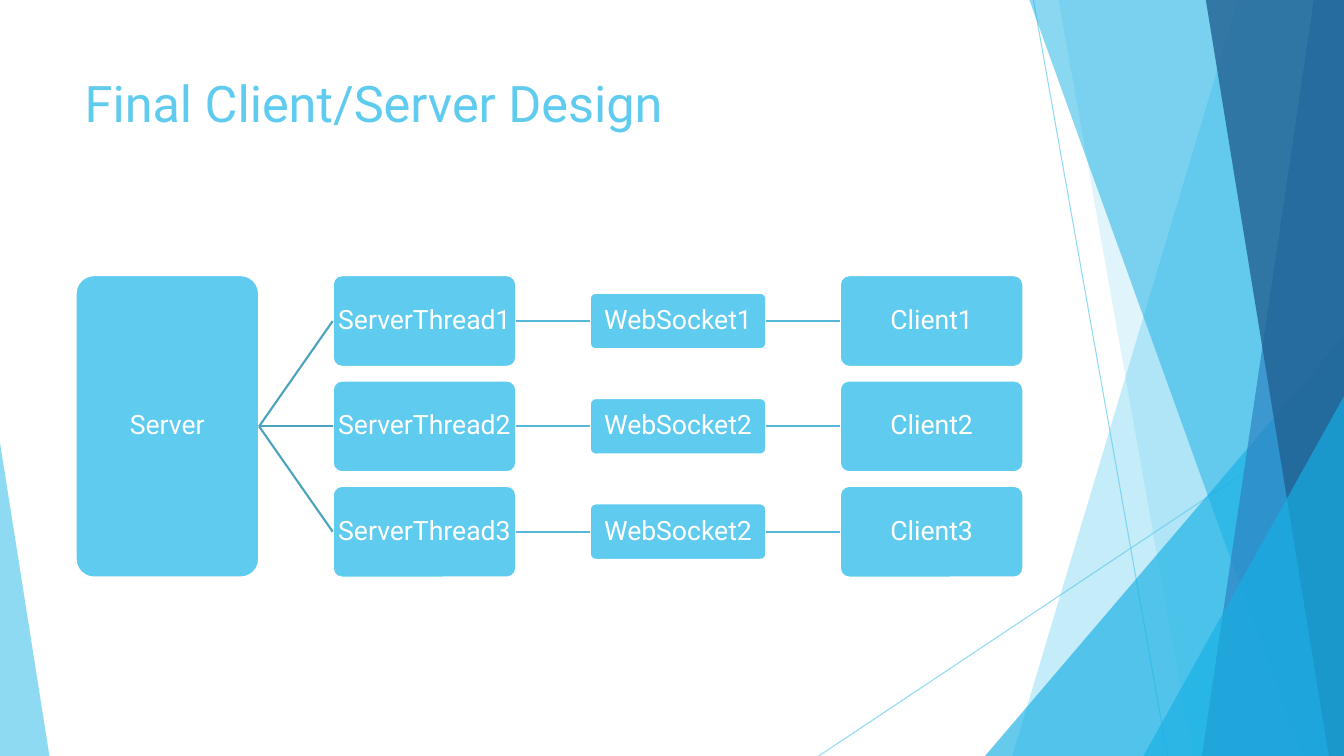
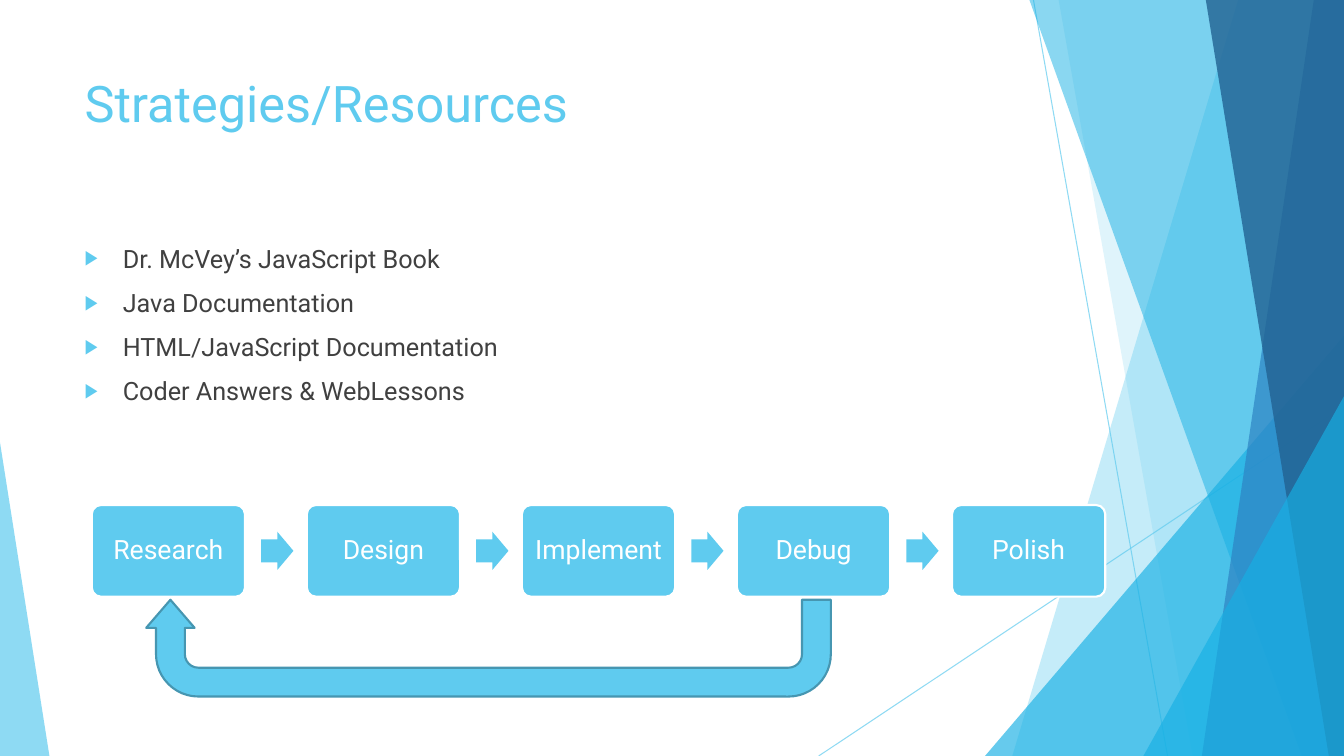
from lxml import etree
from pptx import Presentation
from pptx.dml.color import RGBColor
from pptx.enum import shapes, text
from pptx.oxml import ns
from pptx.util import Inches, Pt

FONT = "Roboto"
SKY = RGBColor(0x5F, 0xCB, 0xEF)
CYAN = RGBColor(0x17, 0xB0, 0xE4)
BLUE = RGBColor(0x2E, 0x83, 0xC3)
NAVY = RGBColor(0x22, 0x62, 0x92)
TRUNK_LINE = RGBColor(0x4C, 0xA3, 0xBF)
BRANCH_LINE = RGBColor(0x56, 0xB8, 0xD9)
LOOP_LINE = RGBColor(0x46, 0x96, 0xB1)
GRAY = RGBColor(0x40, 0x40, 0x40)
WHITE = RGBColor(0xFF, 0xFF, 0xFF)
PAGE_WIDTH, PAGE_HEIGHT = 13.33, 7.5
RIGHT_SITE, LEFT_SITE = 3, 1
SHAPE = shapes.MSO_SHAPE


def add_xml(parent, tag, **attributes):
    """Append a DrawingML element to a parent and return it."""
    return etree.SubElement(parent, ns.qn(tag), attributes)


def paint(fill, color, opacity=100):
    """Give a fill a solid colour with an opacity in percent."""
    fill.solid()
    fill.fore_color.rgb = color
    if opacity < 100:
        tint = fill._xPr.find(ns.qn("a:solidFill"))[0]
        add_xml(tint, "a:alpha", val=str(opacity * 1000))


def style_shape(shape, color, opacity=100, outline=None):
    """Set the fill and outline of a shape and drop its shadow."""
    shape.shadow.inherit = False
    paint(shape.fill, color, opacity)
    if outline is None:
        shape.line.fill.background()
    else:
        shape.line.color.rgb = outline
        shape.line.width = Pt(1.5)


def style_para(para, size, color):
    """Set the font of a whole paragraph."""
    para.font.name = FONT
    para.font.size = Pt(size)
    para.font.color.rgb = color


def add_preset(page, kind, box, color, opacity=100, outline=None, adjust=()):
    """Add a preset shape in a box given in inches."""
    shape = page.shapes.add_shape(kind, *map(Inches, box))
    for index, value in enumerate(adjust):
        shape.adjustments[index] = value
    style_shape(shape, color, opacity, outline)
    return shape


def add_line(page, start, end, color, width, opacity=100):
    """Add a straight connector without a shadow."""
    line = page.shapes.add_connector(
        shapes.MSO_CONNECTOR.STRAIGHT, *map(Inches, start + end))
    line.line.width = Pt(width)
    paint(line.line.fill, color, opacity)
    add_xml(line._element.spPr, "a:effectLst")
    return line


def add_node(page, box, label):
    """Add a rounded box with a centred label."""
    node = add_preset(page, SHAPE.ROUNDED_RECTANGLE, box, SKY,
                      outline=WHITE, adjust=[0.1])
    frame = node.text_frame
    frame.margin_left = frame.margin_right = Inches(0.01)
    frame.margin_top = frame.margin_bottom = Inches(0.01)
    frame.vertical_anchor = text.MSO_ANCHOR.MIDDLE
    para = frame.paragraphs[0]
    para.text = label
    para.alignment = text.PP_ALIGN.CENTER
    para.line_spacing = 0.9
    style_para(para, 19, WHITE)
    return node


def link_nodes(page, source, target, color):
    """Join the right side of one node to the left side of another."""
    link = add_line(page, (0, 0), (0, 0), color, 1.5)
    link.begin_connect(source, RIGHT_SITE)
    link.end_connect(target, LEFT_SITE)


def add_band(page, top_left, bottom_left, color, opacity):
    """Add a slanted band that reaches to the right edge of the page."""
    corners = [(top_left, 0), (PAGE_WIDTH, 0),
               (PAGE_WIDTH, PAGE_HEIGHT), (bottom_left, PAGE_HEIGHT)]
    points = [(Inches(x), Inches(y)) for x, y in corners]
    builder = page.shapes.build_freeform(*points[0], scale=1.0)
    builder.add_line_segments(points[1:], close=True)
    style_shape(builder.convert_to_shape(), color, opacity)


def add_corner(page, left, top, width, peak, color, opacity):
    """Add a right triangle that stands on the bottom of the page."""
    add_preset(page, SHAPE.ISOSCELES_TRIANGLE,
               (left, top, width, PAGE_HEIGHT - top), color, opacity,
               adjust=[peak])


def add_facets(page):
    """Draw the translucent facets shared by all slides."""
    add_line(page, (10.25, 0), (11.58, PAGE_HEIGHT), SKY, 0.75, 70)
    add_line(page, (PAGE_WIDTH, 4.03), (8.12, PAGE_HEIGHT), SKY, 0.75, 70)
    add_band(page, 12.28, 10.04, SKY, 36)
    add_band(page, 10.5, 11.83, SKY, 20)
    add_corner(page, 9.77, 3.33, 3.56, 1, CYAN, 66)
    add_band(page, 10.21, 12.91, CYAN, 50)
    add_band(page, 13.03, 11.92, BLUE, 70)
    add_band(page, 11.96, 13.18, NAVY, 80)
    add_corner(page, 11.34, 3.93, 1.99, 1, CYAN, 66)
    add_corner(page, 0, 4.39, 0.49, 0, SKY, 70)


def add_page(deck, heading):
    """Add a title-only slide with the shared facets and title style."""
    page = deck.slides.add_slide(deck.slide_layouts[5])
    add_facets(page)
    title = page.shapes.title
    title.left, title.top = Inches(0.74), Inches(0.67)
    title.width, title.height = Inches(9.4), Inches(1.44)
    title.text_frame.vertical_anchor = text.MSO_ANCHOR.TOP
    para = title.text_frame.paragraphs[0]
    para.text = heading
    para.alignment = text.PP_ALIGN.LEFT
    style_para(para, 36, SKY)
    return page


def add_network(page, left, top, rows):
    """Draw a server that branches into rows of linked nodes."""
    node_width, node_height, pitch, gap = 1.82, 0.91, 1.045, 0.73
    sizes = [(node_width, node_height), (1.75, 0.56),
             (node_width, node_height)]
    total_height = pitch * (len(rows) - 1) + node_height
    server = add_node(page, (left, top, node_width, total_height), "Server")
    for row, labels in enumerate(rows):
        middle = top + row * pitch + node_height / 2
        x = left + node_width + gap
        source, color = server, TRUNK_LINE
        for label, (width, height) in zip(labels, sizes):
            node = add_node(page, (x, middle - height / 2, width, height),
                            label)
            link_nodes(page, source, node, color)
            source, color = node, BRANCH_LINE
            x += width + gap


def add_bullets(page, box, items):
    """Add a bulleted list in a box."""
    frame = page.shapes.add_textbox(*map(Inches, box)).text_frame
    frame.word_wrap = True
    for index, item in enumerate(items):
        para = frame.add_paragraph() if index else frame.paragraphs[0]
        para.text = item
        para.space_before = Pt(10)
        props = para._p.get_or_add_pPr()
        props.set("marL", str(Inches(0.38)))
        props.set("indent", str(Inches(-0.38)))
        add_xml(add_xml(props, "a:buClr"), "a:srgbClr", val=str(SKY))
        add_xml(props, "a:buSzPct", val="80000")
        add_xml(props, "a:buFont", typeface=FONT)
        add_xml(props, "a:buChar", char="▶")
        style_para(para, 18, GRAY)


def add_process(page, left, top, steps):
    """Draw a row of steps with arrows and a loop back to the first."""
    width, height, pitch = 1.52, 0.91, 2.133
    arrow_width, arrow_height = 0.32, 0.38
    for index, step in enumerate(steps):
        x = left + index * pitch
        add_node(page, (x, top, width, height), step)
        if index < len(steps) - 1:
            add_preset(page, SHAPE.RIGHT_ARROW,
                       (x + width + 0.16, top + (height - arrow_height) / 2,
                        arrow_width, arrow_height), SKY, adjust=[0.6, 0.5])
    loop = add_preset(page, SHAPE.U_TURN_ARROW,
                      (left + 0.54, top + 0.94, 6.79, 0.96), SKY,
                      outline=LOOP_LINE,
                      adjust=[0.298, 0.25, 0.29, 0.438, 1])
    loop.rotation = 180


def add_design_page(deck):
    """Build the slide on the client and server design."""
    page = add_page(deck, "Final Client/Server Design")
    add_network(page, 0.75, 2.73, [
        ("ServerThread1", "WebSocket1", "Client1"),
        ("ServerThread2", "WebSocket2", "Client2"),
        ("ServerThread3", "WebSocket2", "Client3"),
    ])


def add_strategy_page(deck):
    """Build the slide on strategies and resources."""
    page = add_page(deck, "Strategies/Resources")
    add_bullets(page, (0.74, 2.36, 9.4, 1.92), [
        "Dr. McVey’s JavaScript Book",
        "Java Documentation",
        "HTML/JavaScript Documentation",
        "Coder Answers & WebLessons",
    ])
    add_process(page, 0.91, 5.01,
                ["Research", "Design", "Implement", "Debug", "Polish"])


def main():
    """Build and save the deck."""
    deck = Presentation()
    deck.slide_width = Inches(PAGE_WIDTH)
    deck.slide_height = Inches(PAGE_HEIGHT)
    add_design_page(deck)
    add_strategy_page(deck)
    deck.save("out.pptx")


if __name__ == "__main__":
    main()
